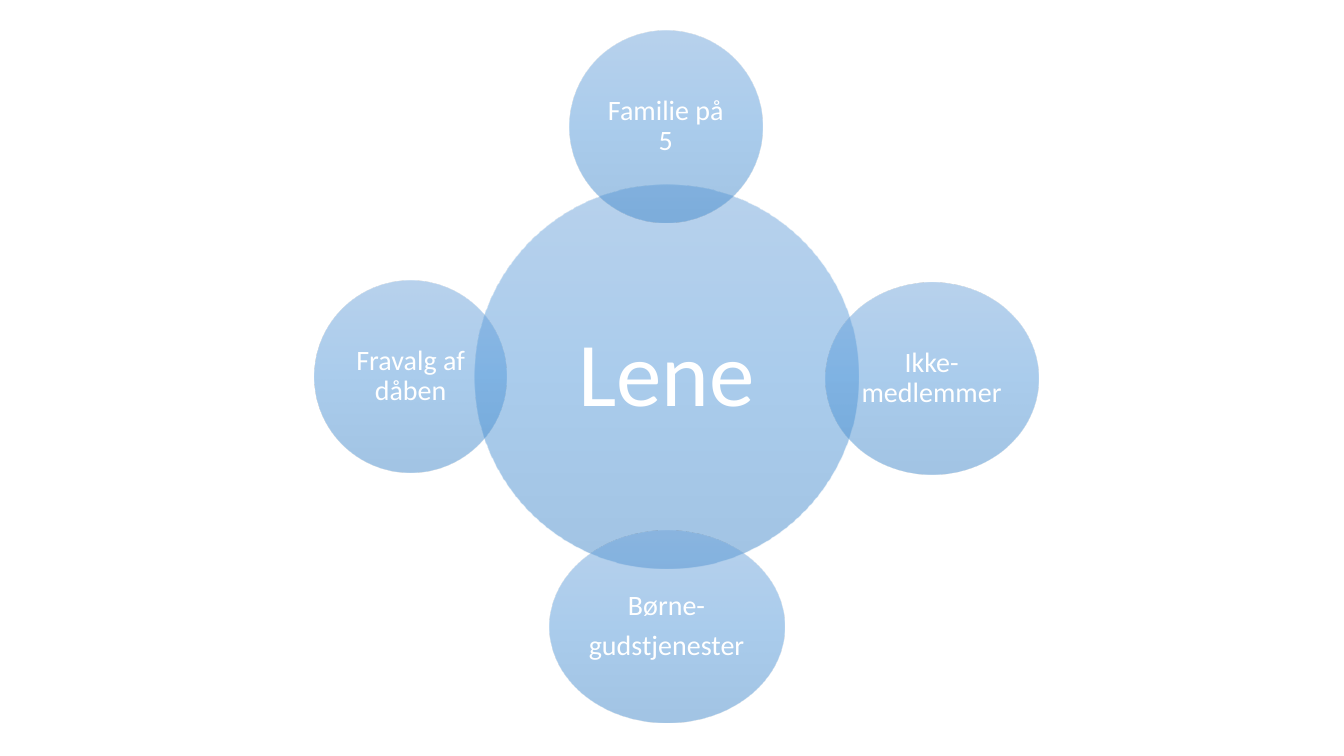
from dataclasses import dataclass

from lxml import etree
from pptx import Presentation
from pptx.dml.color import RGBColor
from pptx.enum import shapes, text
from pptx.oxml import ns
from pptx.util import Cm, Pt


@dataclass(frozen=True)
class Theme:
    font: str = "Calibri"
    ink: str = "FFFFFF"
    stops: tuple = ((0, "71A6DB"), (50, "559BDB"), (100, "448ACA"))
    opacity: int = 50
    hub_size: int = 65
    satellite_size: int = 20
    line_spacing: float = 0.9
    space_after: float = 0.35


THEME = Theme()


def fill_with_glass(circle):
    """Give the circle a see-through gradient that runs from top to bottom."""
    circle.fill.gradient()
    circle.fill.gradient_angle = 270
    stop_list = circle._element.spPr.find(".//" + ns.qn("a:gsLst"))
    for stop in list(stop_list):
        stop_list.remove(stop)
    for position, colour in THEME.stops:
        stop = etree.SubElement(stop_list, ns.qn("a:gs"), pos=str(position * 1000))
        tint = etree.SubElement(stop, ns.qn("a:srgbClr"), val=colour)
        etree.SubElement(tint, ns.qn("a:alpha"), val=str(THEME.opacity * 1000))


deck = Presentation()
deck.slide_width, deck.slide_height = Cm(33.87), Cm(19.05)
page = deck.slides.add_slide(deck.slide_layouts[6])

hub_x, hub_y = 16.8, 9.49
hub_diameter = 9.68
satellite_height = hub_diameter / 2

# Lines of text, offset from the hub's centre, width, height, type size, inset
circles = [
    (["Lene"], 0, 0, hub_diameter, hub_diameter, THEME.hub_size, 0.23),
]
satellites = [
    (["Familie på 5"], -0.02, -6.3, 4.85),
    (["Ikke-medlemmer"], 6.68, 0.04, 5.36),
    (["Børne-", "gudstjenester"], 0, 6.3, 5.92),
    (["Fravalg af dåben"], -6.45, 0, 4.85),
]
for lines, dx, dy, width in satellites:
    circles.append((lines, dx, dy, width, satellite_height, THEME.satellite_size, 0.07))

for lines, dx, dy, width, height, size, inset in circles:
    circle = page.shapes.add_shape(
        shapes.MSO_SHAPE.OVAL,
        Cm(hub_x + dx - width / 2), Cm(hub_y + dy - height / 2),
        Cm(width), Cm(height),
    )
    circle.shadow.inherit = False
    circle.line.fill.background()
    fill_with_glass(circle)

    frame = circle.text_frame
    frame.word_wrap = True
    frame.vertical_anchor = text.MSO_ANCHOR.MIDDLE
    for side in ("left", "top", "right", "bottom"):
        setattr(frame, f"margin_{side}", Cm(inset))

    para_format = {
        "alignment": text.PP_ALIGN.CENTER,
        "line_spacing": THEME.line_spacing,
        "space_after": Pt(size * THEME.space_after),
    }
    for number, line in enumerate(lines):
        para = frame.add_paragraph() if number else frame.paragraphs[0]
        for name, value in para_format.items():
            setattr(para, name, value)
        span = para.add_run()
        span.text = line
        span.font.name = THEME.font
        span.font.size = Pt(size)
        span.font.color.rgb = RGBColor.from_string(THEME.ink)

deck.save("out.pptx")
